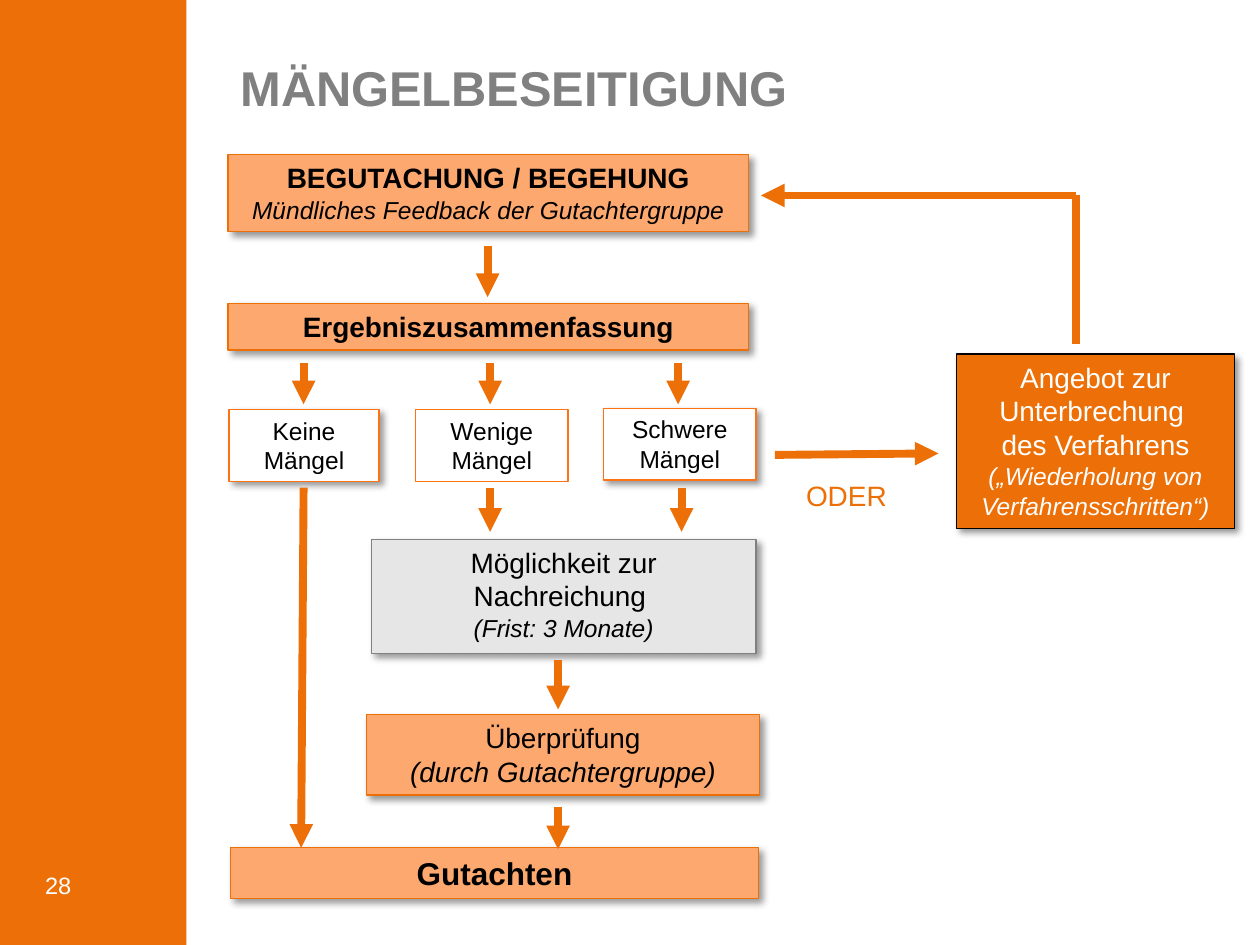
from dataclasses import dataclass

from lxml.etree import SubElement
from pptx import Presentation
from pptx.dml.color import RGBColor
from pptx.enum.shapes import MSO_CONNECTOR, MSO_SHAPE
from pptx.enum.text import MSO_ANCHOR, PP_ALIGN
from pptx.oxml.ns import qn
from pptx.shapes.autoshape import Shape
from pptx.slide import Slide
from pptx.text.text import Font, _Paragraph
from pptx.util import Cm, Pt


@dataclass(frozen=True)
class Theme:
    font: str = "Arial"
    orange: str = "EC7007"
    light_orange: str = "FDA86F"
    bright_orange: str = "FC7216"
    light_grey: str = "E7E6E6"
    grey: str = "808080"
    white: str = "FFFFFF"
    black: str = "000000"
    title_size: float = 27.9
    result_size: float = 18
    body_size: float = 16
    detail_size: float = 14
    number_size: float = 13.5
    outline: float = 0.75
    arrow: float = 4.5


THEME = Theme()


@dataclass(frozen=True)
class Span:
    text: str
    size: float = THEME.body_size
    bold: bool = False
    italic: bool = False


@dataclass(frozen=True)
class Box:
    """A process step; lengths in centimetres, one tuple of spans per paragraph."""
    left: float
    top: float
    width: float
    height: float
    paragraphs: tuple[tuple[Span, ...], ...]
    fill: str = THEME.light_orange
    line: str = THEME.orange
    color: str = THEME.black
    shadow: bool = True


@dataclass(frozen=True)
class Arrow:
    start_x: float
    start_y: float
    end_x: float
    end_y: float
    head: bool = True


def down(x: float, top: float, bottom: float) -> Arrow:
    return Arrow(x, top, x, bottom)


def severity(label: str, left: float, top: float, width: float, shadow: bool = True) -> Box:
    return Box(left, top, width, 1.45, ((Span(label, THEME.detail_size),),),
               THEME.white, THEME.bright_orange, shadow=shadow)


BOXES = (
    Box(4.6, 3.12, 10.49, 1.55, (
        (Span("BEGUTACHUNG / BEGEHUNG", bold=True),),
        (Span("Mündliches Feedback der Gutachtergruppe", THEME.detail_size, italic=True),))),
    Box(4.6, 6.12, 10.49, 0.94, ((Span("Ergebniszusammenfassung", bold=True),),)),
    Box(7.49, 10.87, 7.75, 2.31, ((
        Span("Möglichkeit zur Nachreichung \n"),
        Span("(Frist: 3 Monate)", THEME.detail_size, italic=True)),),
        THEME.light_grey, THEME.grey),
    Box(7.39, 14.4, 7.92, 1.63, ((
        Span("Überprüfung\n"), Span("(durch Gutachtergruppe)", italic=True)),)),
    Box(4.65, 17.09, 10.64, 1.02, ((Span("Gutachten", THEME.result_size, bold=True),),)),
    severity("Keine Mängel", 4.62, 8.26, 3.02),
    severity("Wenige Mängel", 8.38, 8.26, 3.07, shadow=False),
    severity("Schwere Mängel", 12.17, 8.23, 3.07),
    Box(19.28, 7.14, 5.61, 3.51, ((
        Span("Angebot zur Unterbrechung \ndes Verfahrens "),
        Span("(„Wiederholung von Verfahrensschritten“)", THEME.detail_size, italic=True)),),
        THEME.orange, THEME.black, THEME.white),
)

ARROWS = (
    down(9.83, 4.95, 5.99),
    *(down(x, 7.32, 8.15) for x in (6.12, 9.88, 13.67)),
    *(down(x, 9.83, 10.72) for x in (9.88, 13.74)),
    down(11.25, 13.31, 14.3),
    down(11.25, 16.26, 17.12),
    Arrow(6.12, 9.83, 6.07, 17.09),
    Arrow(15.62, 9.17, 18.92, 9.14),
    Arrow(21.69, 3.94, 15.34, 3.94),
    Arrow(21.69, 3.94, 21.69, 6.93, head=False),
)


def rgb(color: str) -> RGBColor:
    return RGBColor.from_string(color)


def style_font(font: Font, span: Span, color: str) -> None:
    font.name = THEME.font
    font.size = Pt(span.size)
    font.bold = span.bold
    font.italic = span.italic
    font.color.rgb = rgb(color)


def add_span(paragraph: _Paragraph, span: Span, color: str) -> None:
    """Append a span, turning each newline into a line break of the same size."""
    for index, line in enumerate(span.text.split("\n")):
        if index:
            paragraph.add_line_break()
            line_break = paragraph._p.findall(qn("a:br"))[-1]
            SubElement(line_break, qn("a:rPr"), sz=str(int(span.size * 100)))
        if line:
            run = paragraph.add_run()
            run.text = line
            style_font(run.font, span, color)


def add_shadow(shape: Shape) -> None:
    effects = shape._element.spPr.find(qn("a:effectLst"))
    shadow = SubElement(effects, qn("a:outerShdw"), blurRad=str(Pt(4)), dist=str(Pt(3)),
                        dir=str(45 * 60000), algn="tl", rotWithShape="0")
    color = SubElement(shadow, qn("a:srgbClr"), val=THEME.black)
    SubElement(color, qn("a:alpha"), val="40000")


def add_rectangle(slide: Slide, left: float, top: float, width: float, height: float,
                  fill: str) -> Shape:
    shape = slide.shapes.add_shape(MSO_SHAPE.RECTANGLE, Cm(left), Cm(top), Cm(width), Cm(height))
    shape.shadow.inherit = False
    shape.fill.solid()
    shape.fill.fore_color.rgb = rgb(fill)
    shape.line.fill.background()
    return shape


def add_box(slide: Slide, box: Box) -> None:
    shape = add_rectangle(slide, box.left, box.top, box.width, box.height, box.fill)
    shape.line.color.rgb = rgb(box.line)
    shape.line.width = Pt(THEME.outline)
    if box.shadow:
        add_shadow(shape)
    frame = shape.text_frame
    frame.word_wrap = True
    frame.vertical_anchor = MSO_ANCHOR.TOP
    for index, spans in enumerate(box.paragraphs):
        paragraph = frame.add_paragraph() if index else frame.paragraphs[0]
        paragraph.alignment = PP_ALIGN.CENTER
        for span in spans:
            add_span(paragraph, span, box.color)


def add_arrow(slide: Slide, arrow: Arrow) -> None:
    connector = slide.shapes.add_connector(
        MSO_CONNECTOR.STRAIGHT, Cm(arrow.start_x), Cm(arrow.start_y),
        Cm(arrow.end_x), Cm(arrow.end_y))
    connector.line.color.rgb = rgb(THEME.orange)
    connector.line.width = Pt(THEME.arrow)
    if arrow.head:
        SubElement(connector.line._get_or_add_ln(), qn("a:tailEnd"), type="triangle")
    SubElement(connector._element.spPr, qn("a:effectLst"))


def add_label(slide: Slide, left: float, top: float, width: float, height: float,
              span: Span, color: str, anchor: MSO_ANCHOR = MSO_ANCHOR.TOP) -> None:
    frame = slide.shapes.add_textbox(Cm(left), Cm(top), Cm(width), Cm(height)).text_frame
    frame.word_wrap = True
    frame.vertical_anchor = anchor
    add_span(frame.paragraphs[0], span, color)


def set_title(slide: Slide, text: str) -> None:
    title = slide.shapes.title
    title.left, title.top, title.width, title.height = Cm(4.6), Cm(1.27), Cm(19.51), Cm(1.19)
    frame = title.text_frame
    frame.text = text
    frame.vertical_anchor = MSO_ANCHOR.MIDDLE
    paragraph = frame.paragraphs[0]
    paragraph.alignment = PP_ALIGN.LEFT
    paragraph.line_spacing = 0.8
    style_font(paragraph.runs[0].font, Span(text, THEME.title_size, bold=True), THEME.grey)


def main() -> None:
    presentation = Presentation()
    presentation.slide_width, presentation.slide_height = Cm(25.4), Cm(19.05)
    slide = presentation.slides.add_slide(presentation.slide_layouts[5])
    add_rectangle(slide, 0, 0, 3.76, 19.05, THEME.orange)
    set_title(slide, "MÄNGELBESEITIGUNG")
    for box in BOXES:
        add_box(slide, box)
    for arrow in ARROWS:
        add_arrow(slide, arrow)
    add_label(slide, 16, 9.53, 2.44, 0.94, Span("ODER"), THEME.orange)
    add_label(slide, 0.66, 16.89, 2.34, 1.37, Span("28", THEME.number_size), THEME.white,
              MSO_ANCHOR.BOTTOM)
    presentation.save("out.pptx")


if __name__ == "__main__":
    main()
